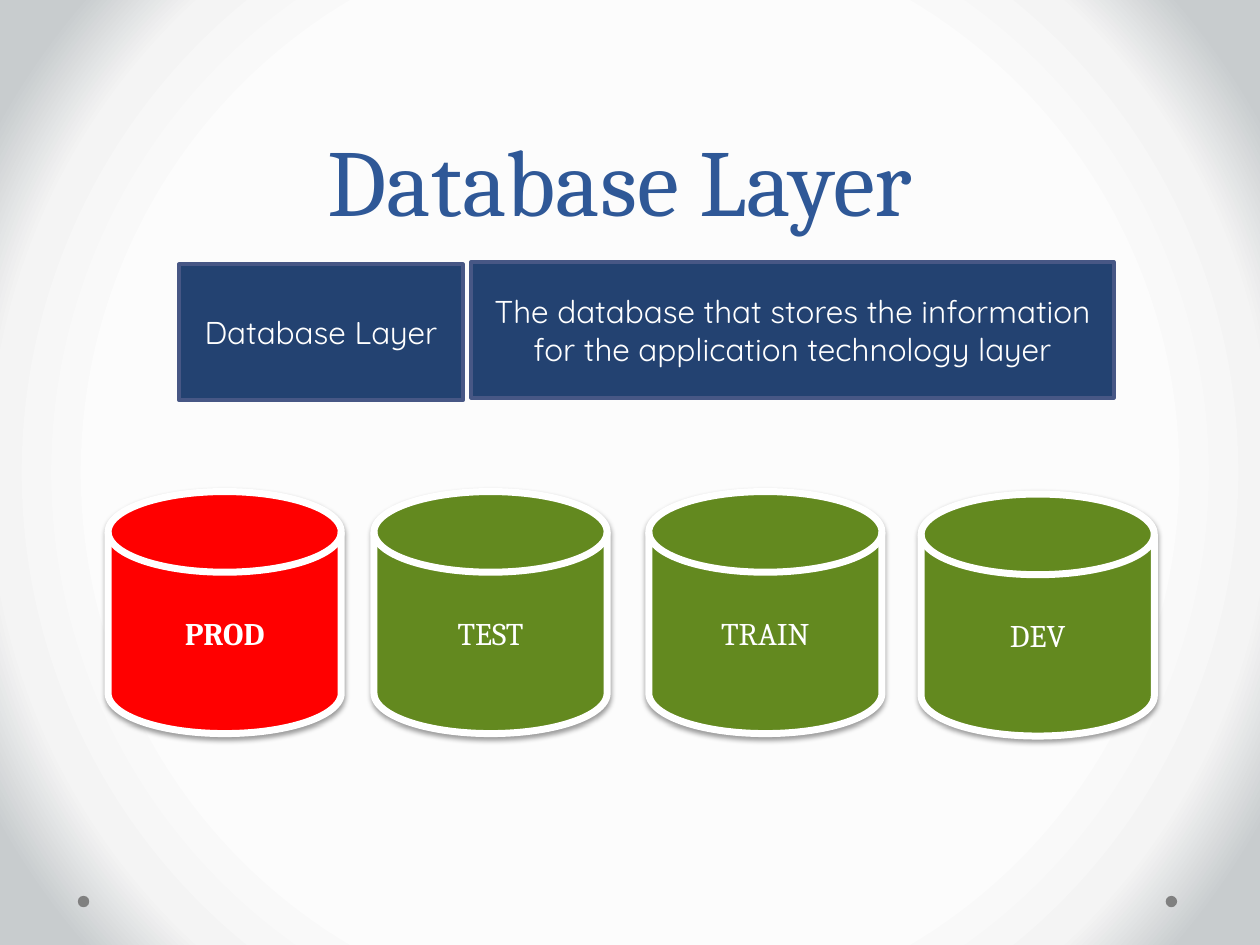
"""Build the Database Layer slide."""
import dataclasses

import lxml.etree
import pptx
import pptx.dml.color
import pptx.enum.shapes
import pptx.enum.text
import pptx.oxml
import pptx.oxml.ns
import pptx.util

Cm = pptx.util.Cm
Pt = pptx.util.Pt
Kind = pptx.enum.shapes.MSO_SHAPE
Anchor = pptx.enum.text.MSO_ANCHOR
NS = pptx.oxml.ns.nsdecls("a")


@dataclasses.dataclass(frozen=True)
class Theme:
    serif: str = "Cambria"
    sans: str = "Quicksand"
    title: str = "2F5897"
    panel: str = "234271"
    edge: str = "475785"
    live: str = "FF0000"
    other: str = "63891F"
    white: str = "FFFFFF"
    black: str = "000000"
    dot: str = "808080"
    glow: tuple = ((66, "FCFCFC"), (81, "F4F4F4"), (92, "C8CCCE"))
    head: int = 54
    body: int = 18


THEME = Theme()


def color(code):
    return pptx.dml.color.RGBColor.from_string(code)


def set_back(slide):
    slide.background.fill.solid()
    props = slide.element.find(".//" + pptx.oxml.ns.qn("p:bgPr"))
    stops = "".join(
        f'<a:gs pos="{place * 1000}"><a:srgbClr val="{code}"/></a:gs>'
        for place, code in THEME.glow
    )
    props.replace(props[0], pptx.oxml.parse_xml(
        f'<a:gradFill {NS} rotWithShape="1"><a:gsLst>{stops}</a:gsLst>'
        '<a:path path="circle"><a:fillToRect l="50000" t="50000" r="50000" b="50000"/>'
        '</a:path></a:gradFill>'
    ))


def put_text(shape, text, font, size, code, bold=False, anchor=Anchor.MIDDLE):
    frame = shape.text_frame
    frame.text = text
    frame.word_wrap = True
    frame.vertical_anchor = anchor
    para = frame.paragraphs[0]
    para.alignment = pptx.enum.text.PP_ALIGN.CENTER
    for run in para.runs:
        run.font.name = font
        run.font.size = Pt(size)
        run.font.bold = bold
        run.font.color.rgb = color(code)
    return para


def add_form(slide, kind, box, fill, line=None, width=0):
    shape = slide.shapes.add_shape(kind, *map(Cm, box))
    shape.shadow.inherit = False
    shape.fill.solid()
    shape.fill.fore_color.rgb = color(fill)
    if line:
        shape.line.color.rgb = color(line)
        shape.line.width = Pt(width)
    else:
        shape.line.fill.background()
    return shape


def add_shade(shape):
    effects = shape.element.spPr.find(pptx.oxml.ns.qn("a:effectLst"))
    effects.append(pptx.oxml.parse_xml(
        f'<a:outerShdw {NS} blurRad="{Pt(3.1)}" dist="{Pt(1.6)}" dir="5400000" '
        f'rotWithShape="0"><a:srgbClr val="{THEME.black}"><a:alpha val="38000"/>'
        '</a:srgbClr></a:outerShdw>'
    ))


def add_title(slide, text):
    shape = slide.shapes.add_textbox(Cm(1.07), Cm(0.43), Cm(22.86), Cm(4.44))
    para = put_text(shape, text, THEME.serif, THEME.head, THEME.title,
                    anchor=Anchor.BOTTOM)
    para.line_spacing = Pt(58)


def add_panel(slide, left, top, width, text):
    shape = add_form(slide, Kind.RECTANGLE, (left, top, width, 2.74),
                     THEME.panel, THEME.edge, 2.25)
    put_text(shape, text, THEME.sans, THEME.body, THEME.white)


def add_disk(slide, left, top, text, live=False):
    shape = add_form(slide, Kind.FLOWCHART_MAGNETIC_DISK, (left, top, 4.7, 4.88),
                     THEME.live if live else THEME.other, THEME.white, 4)
    add_shade(shape)
    put_text(shape, text, THEME.serif, THEME.body, THEME.white, live)


def main():
    deck = pptx.Presentation()
    deck.slide_width, deck.slide_height = Cm(25.4), Cm(19.05)
    slide = deck.slides.add_slide(deck.slide_layouts[6])
    set_back(slide)
    for left in (23.5, 1.57):
        add_form(slide, Kind.OVAL, (left, 18.06, 0.23, 0.23), THEME.dot)
    add_title(slide, "Database Layer")
    add_panel(slide, 3.61, 5.33, 5.72, "Database Layer")
    add_panel(slide, 9.5, 5.28, 12.95,
              "The database that stores the information "
              "for the application technology layer")
    add_disk(slide, 2.18, 9.91, "PROD", live=True)
    add_disk(slide, 7.54, 9.91, "TEST")
    add_disk(slide, 13.08, 9.91, "TRAIN")
    add_disk(slide, 18.57, 9.96, "DEV")
    deck.save("out.pptx")


if __name__ == "__main__":
    main()
